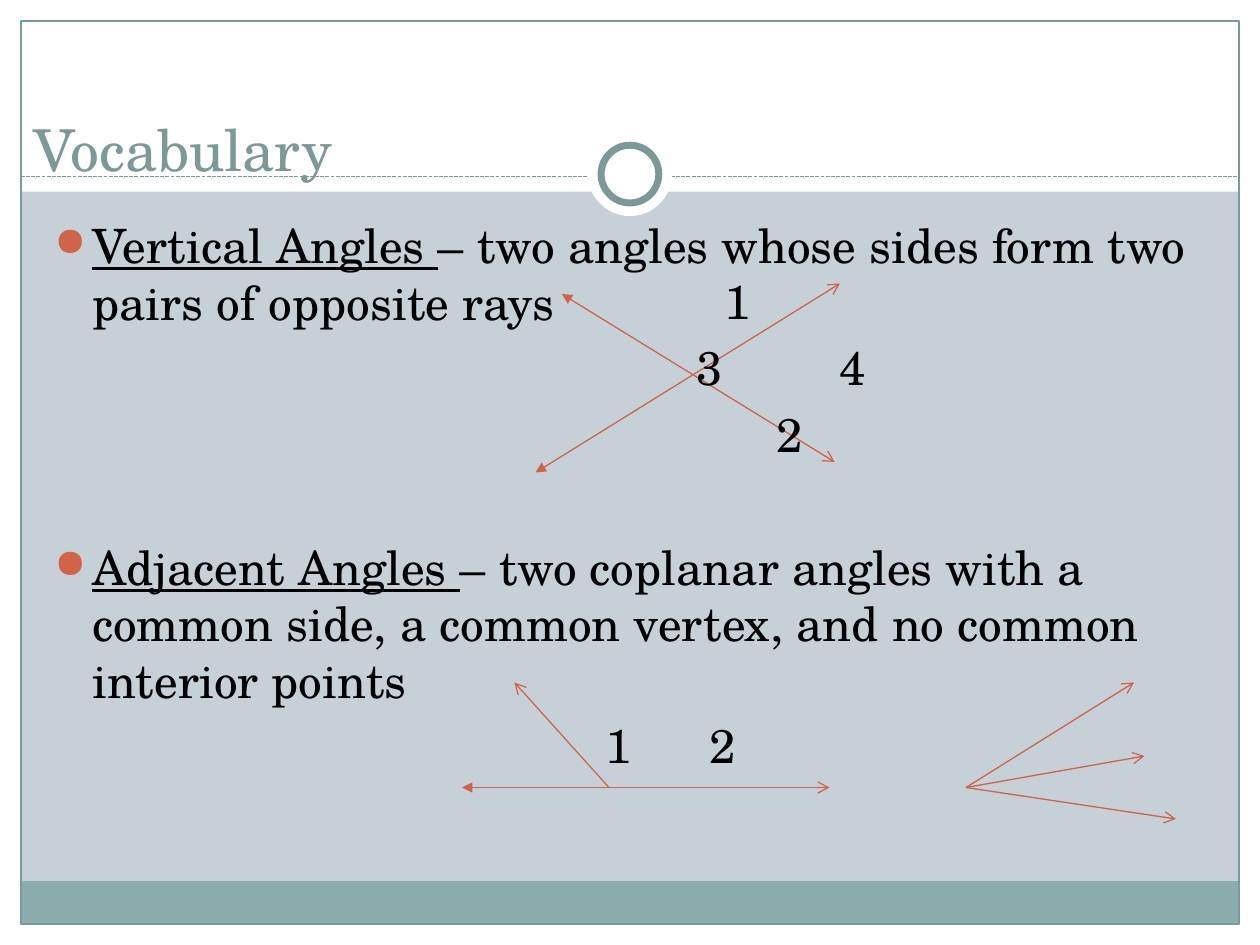
from dataclasses import dataclass

from lxml.etree import SubElement
from pptx import Presentation
from pptx.dml.color import RGBColor
from pptx.enum.dml import MSO_LINE
from pptx.enum.shapes import MSO_CONNECTOR, MSO_SHAPE
from pptx.enum.text import MSO_ANCHOR, MSO_AUTO_SIZE, PP_ALIGN
from pptx.oxml.ns import qn
from pptx.util import Pt


@dataclass(frozen=True)
class Theme:
    back: str = "C5D1D7"
    paper: str = "FFFFFF"
    band: str = "8CADAE"
    trim: str = "7C999A"
    accent: str = "D16349"
    ink: str = "000000"
    font: str = "TeX Gyre Schola"
    head: float = 33
    body: float = 27
    thin: float = 0.75
    ring: float = 4


THEME = Theme()


def color(code):
    return RGBColor.from_string(code)


def write(para, text, size=THEME.body, ink=THEME.ink, under=False):
    run = para.add_run()
    run.text = text
    font = run.font
    font.name, font.size, font.underline = THEME.font, Pt(size), under
    font.color.rgb = color(ink)


def text_box(slide, box, inset=(7.2, 3.6)):
    frame = slide.shapes.add_textbox(*map(Pt, box)).text_frame
    frame.word_wrap = True
    frame.margin_left = frame.margin_right = Pt(inset[0])
    frame.margin_top = frame.margin_bottom = Pt(inset[1])
    return frame


def shape(slide, kind, box, fill=None, line=None, width=THEME.thin):
    item = slide.shapes.add_shape(kind, *map(Pt, box))
    item.shadow.inherit = False
    if fill:
        item.fill.solid()
        item.fill.fore_color.rgb = color(fill)
    else:
        item.fill.background()
    if line:
        item.line.color.rgb = color(line)
        item.line.width = Pt(width)
    else:
        item.line.fill.background()


def stroke(slide, start, end, ink, head=None, tail=None, dash=None):
    item = slide.shapes.add_connector(
        MSO_CONNECTOR.STRAIGHT, *map(Pt, (*start, *end)))
    item.line.color.rgb = color(ink)
    item.line.width = Pt(THEME.thin)
    if dash:
        item.line.dash_style = dash
    props = item._element.spPr
    line = props.find(qn("a:ln"))
    for tag, kind in (("a:headEnd", head), ("a:tailEnd", tail)):
        if kind:
            SubElement(line, qn(tag), type=kind)
    SubElement(props, qn("a:effectLst"))


def bullet(para, indent=21.6):
    props = para._p.get_or_add_pPr()
    props.set("marL", str(Pt(indent)))
    props.set("indent", str(-Pt(indent)))
    tint = SubElement(props, qn("a:buClr"))
    SubElement(tint, qn("a:srgbClr"), val=THEME.accent)
    SubElement(props, qn("a:buSzPct"), val="85000")
    SubElement(props, qn("a:buChar"), char="●")


def frame(slide, box, edge=12, top=109.5, foot=24.5, rule=101):
    """Draw the white margins, the bottom band and the ringed rule."""
    x, y, w, h = box
    margins = ((x, y + h - edge, w, edge), (x, y, w, top),
               (x, y, edge, h), (x + w - edge, y, edge, h))
    for part in margins:
        shape(slide, MSO_SHAPE.RECTANGLE, part, THEME.paper)
    inner = w - 2 * edge
    shape(slide, MSO_SHAPE.RECTANGLE,
          (x + edge, y + h - edge - foot, inner, foot), THEME.band)
    shape(slide, MSO_SHAPE.RECTANGLE,
          (x + edge, y + edge, inner, h - 2 * edge), line=THEME.trim)
    stroke(slide, (x + edge, y + rule), (x + w - edge, y + rule),
           THEME.trim, dash=MSO_LINE.SQUARE_DOT)
    for size, line in ((48, None), (33, THEME.trim)):
        spot = (x + (w - size) / 2, y + 99.5 - size / 2, size, size)
        shape(slide, MSO_SHAPE.OVAL, spot, THEME.paper, line, THEME.ring)


def heading(slide, box, text):
    title = slide.shapes.title
    title.left, title.top, title.width, title.height = map(Pt, box)
    area = title.text_frame
    area.auto_size = MSO_AUTO_SIZE.NONE
    area.vertical_anchor = MSO_ANCHOR.BOTTOM
    para = area.paragraphs[0]
    para.alignment = PP_ALIGN.LEFT
    write(para, text, size=THEME.head, ink=THEME.trim)
    # Bring the title in front of the white margins
    slide.shapes._spTree.append(title._element)


def terms(slide, box, items, gap):
    """List each term, underlined, with its meaning."""
    area = text_box(slide, box)
    for i, (term, meaning) in enumerate(items):
        para = area.add_paragraph() if i else area.paragraphs[0]
        if i:
            para.space_before = Pt(gap)
        bullet(para)
        write(para, term, under=True)
        write(para, meaning)


def figure(slide, box, lines=(), rays=(), labels=()):
    """Draw two-way lines, one-way rays and centred labels inside the box."""
    x, y = box[:2]

    def place(spot):
        return x + spot[0], y + spot[1]

    for head, group in (("triangle", lines), (None, rays)):
        for start, end in group:
            stroke(slide, place(start), place(end), THEME.accent, head, "arrow")
    wide, high = 30, 33
    for text, spot in labels:
        mid, top = place(spot)
        area = text_box(slide, (mid - wide / 2, top, wide, high), (0, 0))
        para = area.paragraphs[0]
        para.alignment = PP_ALIGN.CENTER
        write(para, text)


def main():
    deck = Presentation()
    wide, high = 720, 540
    deck.slide_width, deck.slide_height = Pt(wide), Pt(high)
    slide = deck.slides.add_slide(deck.slide_layouts[5])
    slide.background.fill.solid()
    slide.background.fill.fore_color.rgb = color(THEME.back)

    frame(slide, (0, 0, wide, high))
    heading(slide, (12, 48, 672, 60), "Vocabulary")
    terms(slide, (24, 120, 669.6, 360), (
        ("Vertical Angles ",
         "– two angles whose sides form two pairs of opposite rays"),
        ("Adjacent Angles ",
         "– two coplanar angles with a common side, a common vertex, "
         "and no common interior points"),
    ), gap=119)

    # Vertical angles
    figure(slide, (306, 162, 174, 108),
           lines=(((15, 6), (171, 102)), ((0, 108), (174, 0))),
           labels=(("1", (115.5, -6.5)), ("3", (99.5, 31.5)),
                   ("4", (181.5, 31.5)), ("2", (145, 69.5))))
    # Adjacent angles on a line
    figure(slide, (264, 390, 210, 60),
           lines=(((0, 60), (210, 60)),),
           rays=(((84, 60), (30, 0)),),
           labels=(("1", (89.5, 19.5)), ("2", (149, 19.5))))
    # Adjacent angles with a shared vertex
    vertex = (0, 60)
    figure(slide, (552, 390, 120, 78),
           rays=[(vertex, end) for end in ((96, 0), (120, 78), (102, 42))])

    deck.save("out.pptx")


if __name__ == "__main__":
    main()
